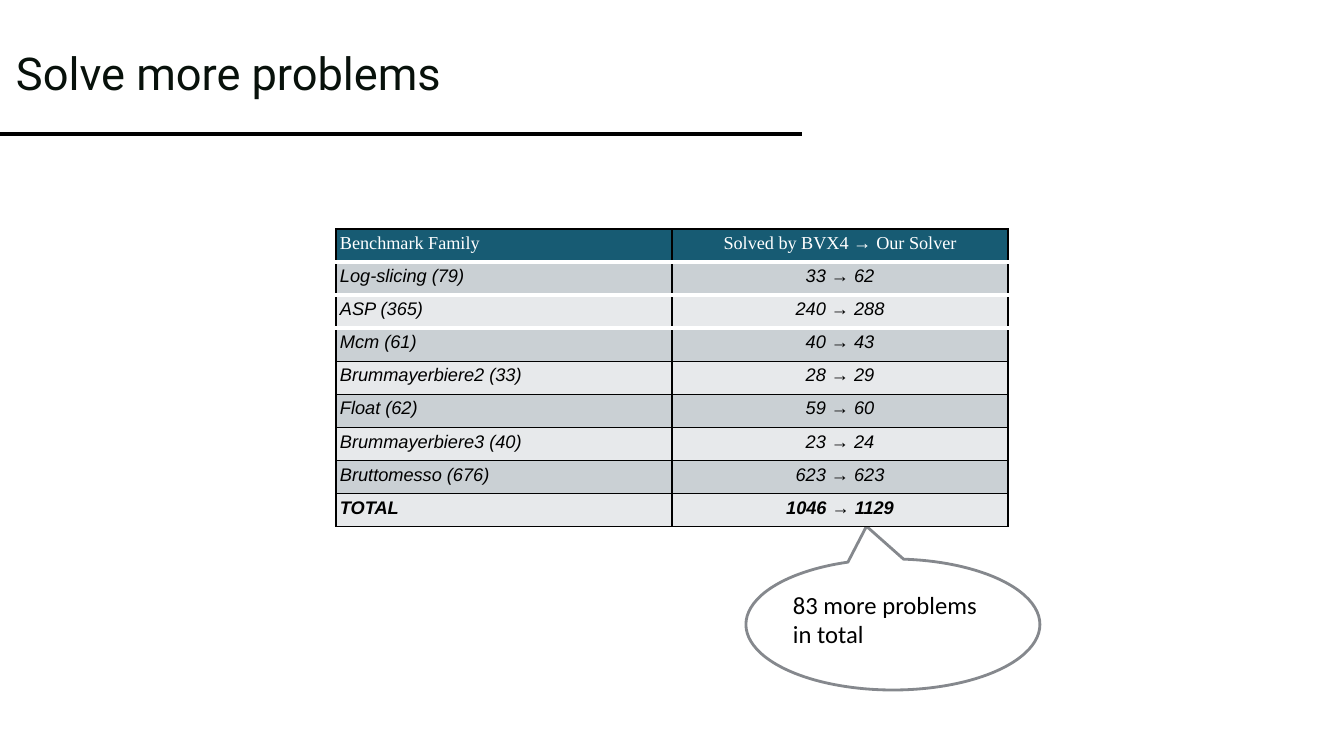
from lxml.etree import SubElement as Sub
from pptx import Presentation
from pptx.dml.color import RGBColor as Rgb
from pptx.enum.shapes import MSO_CONNECTOR as Conn, MSO_SHAPE as Kind
from pptx.enum.text import MSO_ANCHOR as Anchor, PP_ALIGN as Align
from pptx.oxml import parse_xml
from pptx.oxml.ns import nsdecls, qn
from pptx.util import Pt

SCALE = 914400 / 100.8
BLACK, WHITE = "000000", "FFFFFF"
TEAL, DARK, LIGHT = "175B73", "CAD0D4", "E7E9EB"
HEAD = ("Benchmark Family", "Solved by BVX4", "Our Solver")
ROWS = [
    ("Log-slicing (79)", 33, 62),
    ("ASP (365)", 240, 288),
    ("Mcm (61)", 40, 43),
    ("Brummayerbiere2 (33)", 28, 29),
    ("Float (62)", 59, 60),
    ("Brummayerbiere3 (40)", 23, 24),
    ("Bruttomesso (676)", 623, 623),
    ("TOTAL", 1046, 1129),
]


def px(*vals):
    """Turn pixel lengths into EMU."""
    return [round(val * SCALE) for val in vals]


def tint(code):
    """Turn a hex string into a colour."""
    return Rgb.from_string(code)


def put(item, **vals):
    """Set attributes from a dict of values."""
    for key, val in vals.items():
        setattr(item, key, val)


def write(para, text, size, color, **vals):
    """Add a run of text with its font values."""
    run = para.add_run()
    run.text = text
    put(run.font, size=Pt(size), **vals)
    run.font.color.rgb = tint(color)


def label(slide, box, text, size, color, face, pad, space):
    """Place a wrapped text box, centred in height."""
    frame = slide.shapes.add_textbox(*px(*box)).text_frame
    side, top = px(*pad)
    put(frame, word_wrap=True, vertical_anchor=Anchor.MIDDLE,
        margin_left=side, margin_right=side, margin_top=top, margin_bottom=top)
    para = frame.paragraphs[0]
    para.line_spacing = space
    write(para, text, size, color, name=face)


def title(slide, box):
    """Place the title and the rule below it."""
    left, top, wide, high = box
    label(slide, (left + 6, top + 3, wide - 45, high + 12),
          "Solve more problems", 32.3, "08110B", "Roboto", (10, 5), 0.9)
    base = top + high
    rule = slide.shapes.add_connector(
        Conn.STRAIGHT, *px(left, base, left + wide, base))
    rule.line.color.rgb = tint(BLACK)
    rule.line.width = Pt(2.25)
    Sub(rule.element.spPr, qn("a:effectLst"))


def edge(cell, sides):
    """Draw the borders of a cell, each with colour and points."""
    props = cell._tc.get_or_add_tcPr()
    for spot, (side, (color, width)) in enumerate(sides.items()):
        props.insert(spot, parse_xml(
            f'<a:ln{side} {nsdecls("a")} w="{Pt(width)}"><a:solidFill>'
            f'<a:srgbClr val="{color}"/></a:solidFill></a:ln{side}>'))


def results(slide, box):
    """Place the table of solved problems."""
    lines = [HEAD, *ROWS]
    grid = slide.shapes.add_table(len(lines), 2, *px(*box)).table
    thin, thick = (BLACK, 1), (WHITE, 3)
    pad = px(4)[0]
    for num, (name, old, new) in enumerate(lines):
        head = num == 0
        face = "Times New Roman" if head else "Arial"
        color = WHITE if head else BLACK
        fill = TEAL if head else (LIGHT, DARK)[num % 2]
        look = dict(bold=num == len(ROWS), italic=not head)
        sides = dict(L=thin, R=thin, T=thick if 1 <= num <= 3 else thin,
                     B=thick if num < 3 else thin)
        parts = [[(name, face, look)],
                 [(f"{old} ", face, look),
                  ("→ ", "Arial", dict(look, italic=False)),
                  (f"{new}", face, look)]]
        for col, runs in enumerate(parts):
            cell = grid.cell(num, col)
            put(cell, margin_left=pad, margin_right=pad,
                margin_top=pad, margin_bottom=pad)
            cell.fill.solid()
            cell.fill.fore_color.rgb = tint(fill)
            edge(cell, sides)
            para = cell.text_frame.paragraphs[0]
            para.alignment = (Align.LEFT, Align.CENTER)[col]
            for text, font, style in runs:
                write(para, text, 13, color, name=font, **style)


def callout(slide, box):
    """Place the speech bubble with its note."""
    left, top, wide, high = box
    bubble = slide.shapes.add_shape(Kind.OVAL_CALLOUT, *px(*box))
    bubble.shadow.inherit = False
    bubble.fill.background()
    bubble.line.color.rgb = tint("85888D")
    bubble.line.width = Pt(2)
    for num, val in enumerate((-0.09, -0.75)):
        bubble.adjustments[num] = val
    label(slide, (left + 43, top + 26, wide - 80, high - 63),
          "83 more problems in total", 17.6, BLACK, "Calibri", (4, 4), 1.0)


def main():
    """Build the slide and save it."""
    deck = Presentation()
    wide, high = px(1344, 756)
    put(deck, slide_width=wide, slide_height=high)
    slide = deck.slides.add_slide(deck.slide_layouts[6])
    title(slide, (0, 0, 802, 134))
    callout(slide, (746, 559, 294, 131))
    results(slide, (336, 229, 672, 298))
    deck.save("out.pptx")


if __name__ == "__main__":
    main()
